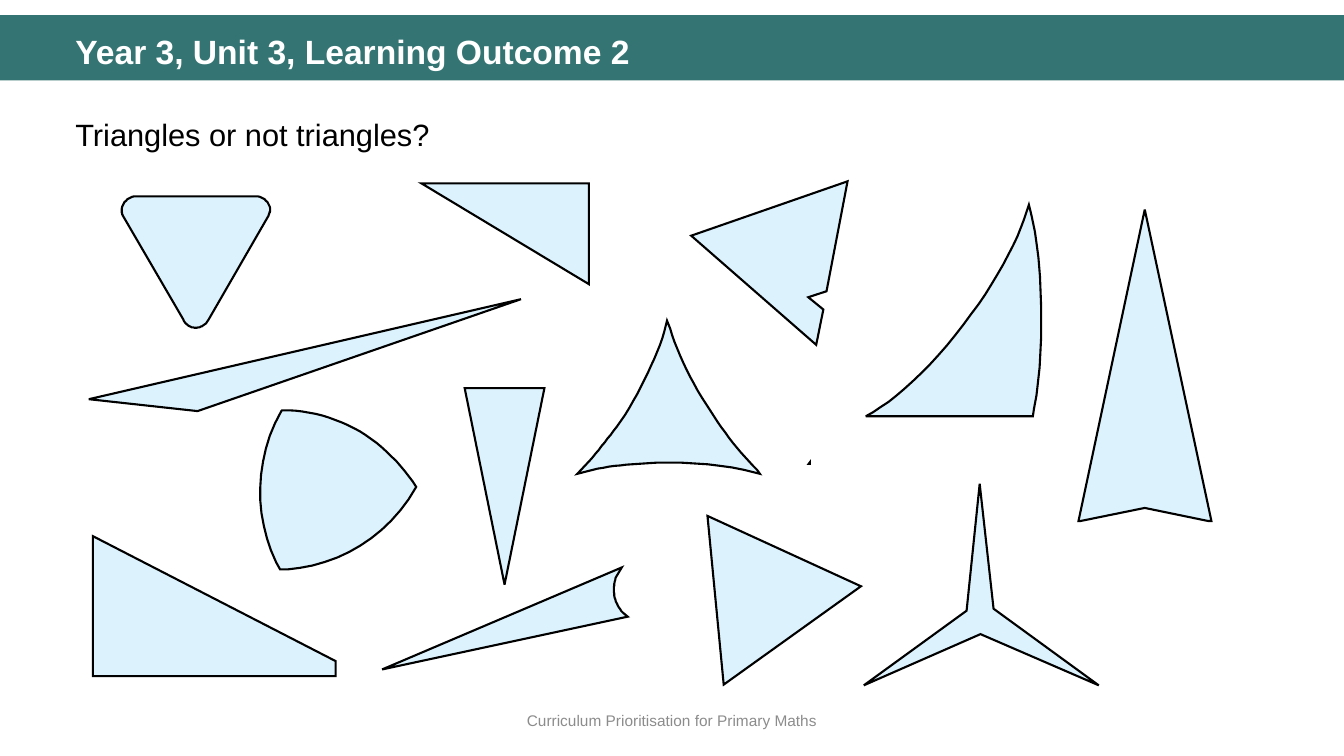
from lxml import etree
from pptx import Presentation
from pptx.dml.color import RGBColor
from pptx.enum import shapes, text
from pptx.oxml import ns
from pptx.util import Cm, Pt

TEAL = RGBColor(0x34, 0x75, 0x74)
PALE = RGBColor(0xDC, 0xF3, 0xFE)
GREY = RGBColor(0x8C, 0x8C, 0x8C)
WHITE = RGBColor(0xFF, 0xFF, 0xFF)
BLACK = RGBColor(0, 0, 0)

KIND = shapes.MSO_SHAPE
UNIT = Cm(0.01)
STEPS = 12

# Each outline is in hundredths of a centimetre: pairs are corners, sixes are curves.
OUTLINES = {
    "notched": [(1936, 57), (1883, 334), (1837, 349), (1875, 380), (1857, 469), (1542, 194)],
    "rounded": [(293, 426), (280, 426, 267, 418, 262, 405), (110, 144),
                (107, 138, 107, 133, 107, 131), (107, 111, 123, 95, 143, 95), (445, 95),
                (465, 95, 481, 111, 481, 131), (481, 133, 478, 138, 476, 145), (326, 405),
                (320, 418, 307, 426, 293, 426)],
    "bulging": [(511, 634), (580, 634, 646, 652, 707, 687), (765, 723, 813, 771, 849, 827),
                (778, 954, 653, 1025, 524, 1035), (506, 1035), (496, 1017),
                (440, 900, 440, 758, 509, 636)],
    "hollow": [(1481, 408), (1489, 428), (1509, 494, 1545, 568, 1591, 636),
               (1626, 692, 1667, 743, 1708, 784), (1715, 794), (1675, 784),
               (1616, 771, 1553, 766, 1484, 766), (1423, 766, 1362, 771, 1306, 781),
               (1255, 794), (1286, 761), (1316, 725, 1347, 687, 1375, 646),
               (1418, 575, 1454, 502, 1474, 436)],
    "dart": [(2685, 128), (2853, 913), (2845, 913), (2685, 880), (2523, 913), (2518, 913)],
    "star": [(2569, 1327), (2271, 1198), (1977, 1327), (2236, 1139), (2269, 819), (2304, 1134)],
    "sail": [(2393, 116), (2396, 128), (2414, 194, 2424, 293, 2424, 405),
             (2424, 489, 2419, 568, 2406, 629), (2403, 649), (1982, 649),
             (2053, 611, 2144, 530, 2228, 418), (2307, 316, 2363, 212, 2388, 131)],
    "tiny": [(1838, 769), (1841, 765), (1841, 769)],
    "clipped": [(34, 951), (646, 1266), (646, 1304), (34, 1304)],
    "sliver": [(24, 606), (1113, 354), (298, 636)],
    "bitten": [(1367, 1030), (1352, 1055), (1349, 1066, 1347, 1076, 1347, 1086),
               (1347, 1106, 1354, 1127, 1370, 1144), (1382, 1154), (763, 1287)],
}

PRESETS = [
    (KIND.RIGHT_TRIANGLE, (8.62, 0.62, 4.22, 2.54), 180),
    (KIND.ISOSCELES_TRIANGLE, (9.71, 5.78, 2.01, 4.95), 180),
    (KIND.ISOSCELES_TRIANGLE, (15.73, 9.11, 4.27, 3.68), 84.5),
]


def trace(outline):
    """Return the corners of an outline with its curves cut into short lines."""
    dots = [outline[0]]
    for step in outline[1:]:
        if len(step) == 2:
            dots.append(step)
            continue
        ends = [dots[-1], step[:2], step[2:4], step[4:]]
        for i in range(1, STEPS + 1):
            t = i / STEPS
            parts = [(1 - t) ** 3, 3 * t * (1 - t) ** 2, 3 * t * t * (1 - t), t ** 3]
            dots.append(tuple(round(sum(w * e[axis] for w, e in zip(parts, ends)))
                              for axis in (0, 1)))
    return dots


def paint(shape):
    """Give a shape the pale fill and a black line with sharp corners."""
    shape.shadow.inherit = False
    shape.fill.solid()
    shape.fill.fore_color.rgb = PALE
    shape.line.color.rgb = BLACK
    shape.line.width = Pt(1.5)
    line = shape.line._get_or_add_ln()
    etree.SubElement(line, ns.qn("a:miter")).set("lim", "800000")


def write(slide, box, words, color, align=text.PP_ALIGN.LEFT, **format):
    """Place one line of text in a box."""
    frame = slide.shapes.add_textbox(*map(Cm, box)).text_frame
    frame.word_wrap = True
    frame.vertical_anchor = text.MSO_ANCHOR.MIDDLE
    line = frame.paragraphs[0]
    line.alignment = align
    run = line.add_run()
    run.text = words
    run.font.color.rgb = color
    for name, value in {"name": "Arial", **format}.items():
        setattr(run.font, name, value)


def banner(slide, box):
    """Draw the title band."""
    left, top, width, height = box
    band = slide.shapes.add_shape(KIND.RECTANGLE, *map(Cm, box))
    band.shadow.inherit = False
    band.fill.solid()
    band.fill.fore_color.rgb = TEAL
    band.line.fill.background()
    write(slide, (left + 1.65, top + 0.3, width - 2.93, 1.2),
          "Year 3, Unit 3, Learning Outcome 2", WHITE, size=Pt(24), bold=True)


def board(slide, box):
    """Draw the triangles and their look-alikes."""
    left, top = box[:2]
    for outline in OUTLINES.values():
        dots = trace(outline)
        pen = slide.shapes.build_freeform(*dots[0], scale=UNIT)
        pen.add_line_segments(dots[1:], close=True)
        paint(pen.convert_to_shape(Cm(left), Cm(top)))
    for kind, (x, y, width, height), turn in PRESETS:
        shape = slide.shapes.add_shape(kind, *map(Cm, (left + x, top + y, width, height)))
        shape.rotation = turn
        paint(shape)


def main():
    """Build the slide and save it."""
    deck = Presentation()
    deck.slide_width, deck.slide_height = Cm(33.87), Cm(19.05)
    slide = deck.slides.add_slide(deck.slide_layouts[6])
    banner(slide, (0, 0.38, 33.87, 1.65))
    write(slide, (0, 17.65, 33.87, 1.02), "Curriculum Prioritisation for Primary Maths",
          GREY, text.PP_ALIGN.CENTER, size=Pt(11))
    board(slide, (2, 4, 29, 13.5))
    write(slide, (1.65, 2.77, 9.86, 1.2), "Triangles or not triangles?", BLACK, size=Pt(22))
    deck.save("out.pptx")


if __name__ == "__main__":
    main()
